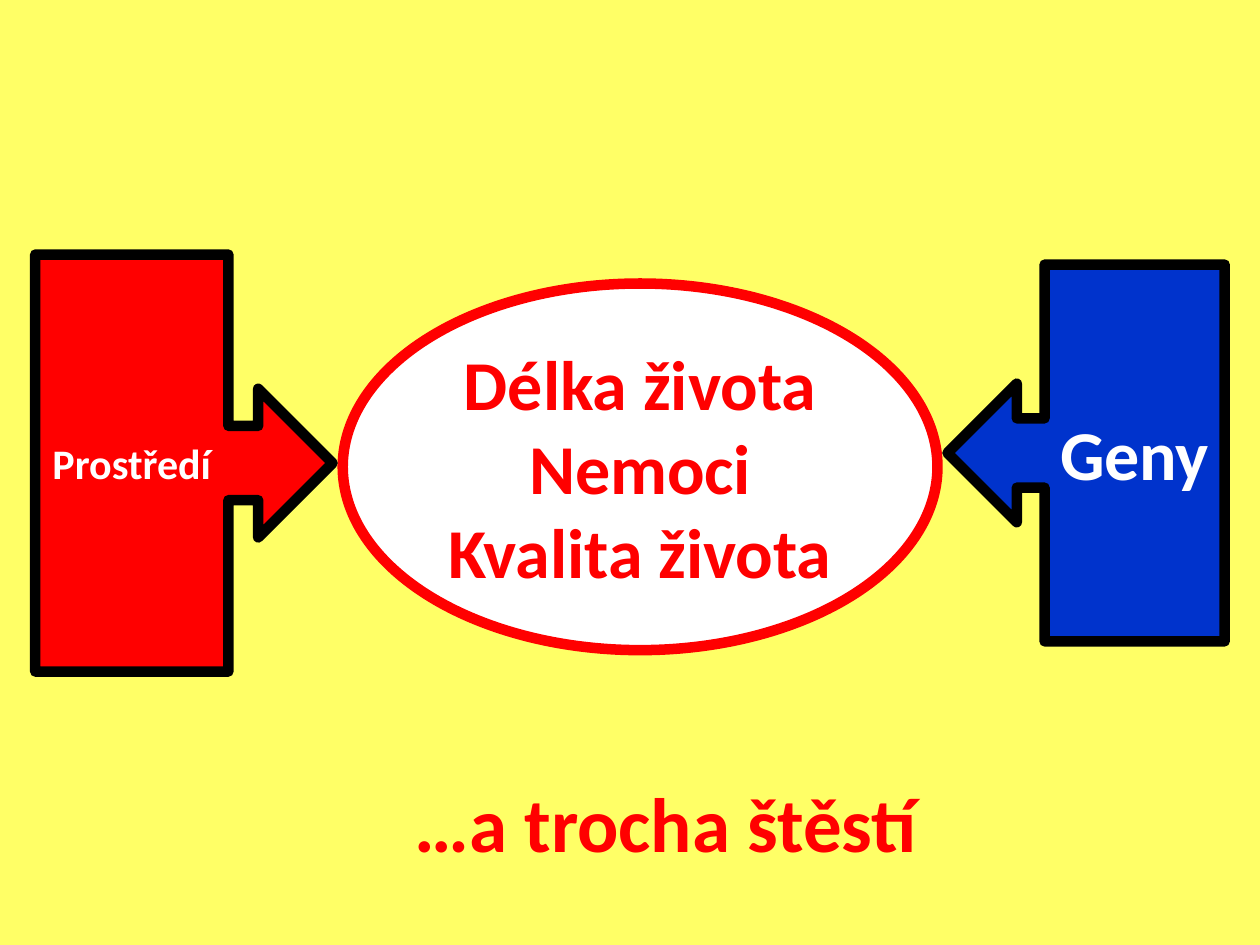
from pptx import Presentation
from pptx.dml.color import RGBColor
from pptx.enum.shapes import MSO_SHAPE
from pptx.enum.text import MSO_ANCHOR, MSO_AUTO_SIZE, PP_ALIGN
from pptx.util import Inches, Pt

OVAL = MSO_SHAPE.OVAL
LEFT = MSO_SHAPE.LEFT_ARROW_CALLOUT
RIGHT = MSO_SHAPE.RIGHT_ARROW_CALLOUT
MIDDLE = MSO_ANCHOR.MIDDLE
CENTER = PP_ALIGN.CENTER
GROW = MSO_AUTO_SIZE.SHAPE_TO_FIT_TEXT

YELLOW, RED, BLUE = "FFFF66", "FF0000", "0033CC"
WHITE, BLACK = "FFFFFF", "000000"


def color(code):
    """Turn a hex string into a colour."""
    return RGBColor.from_string(code)


class Board:
    """Hold the style and the current slide."""

    font = "Calibri"
    border = Pt(6)

    def __init__(self, slide, back):
        """Paint the slide background."""
        self.slide = slide
        fill = slide.background.fill
        fill.solid()
        fill.fore_color.rgb = color(back)

    def letter(self, frame, lines, size, ink, align=None):
        """Fill a text frame with bold lines."""
        frame.text = "\n".join(lines)
        for para in frame.paragraphs:
            para.alignment = align
            font = para.font
            font.name, font.size, font.bold = self.font, Pt(size), True
            font.color.rgb = color(ink)

    def shape(self, kind, box, fill, line, lines, size, ink):
        """Add a bordered shape with centred text."""
        shape = self.slide.shapes.add_shape(kind, *map(Inches, box))
        shape.shadow.inherit = False
        shape.fill.solid()
        shape.fill.fore_color.rgb = color(fill)
        shape.line.color.rgb = color(line)
        shape.line.width = self.border
        frame = shape.text_frame
        frame.vertical_anchor = MIDDLE
        frame.word_wrap = True
        self.letter(frame, lines, size, ink, CENTER)

    def label(self, box, text, size, ink):
        """Add a text box that fits its single line."""
        frame = self.slide.shapes.add_textbox(*map(Inches, box)).text_frame
        frame.word_wrap = False
        frame.auto_size = GROW
        self.letter(frame, [text], size, ink)


def main():
    """Build and save the slide."""
    deck = Presentation()
    deck.slide_width, deck.slide_height = Inches(10), Inches(7.5)
    board = Board(deck.slides.add_slide(deck.slide_layouts[6]), YELLOW)
    life = ["Délka života", "Nemoci", "Kvalita života"]
    board.shape(OVAL, (2.72, 2.25, 4.72, 2.91), WHITE, RED, life, 40, RED)
    board.shape(LEFT, (7.52, 2.1, 2.2, 2.99), BLUE, BLACK, ["Geny"], 40, WHITE)
    board.shape(RIGHT, (0.28, 2.02, 2.36, 3.31), RED, BLACK, ["Prostředí"], 24, WHITE)
    board.label((3.19, 6.11, 4.23, 0.84), "…a trocha štěstí", 44, RED)
    deck.save("out.pptx")


if __name__ == "__main__":
    main()
